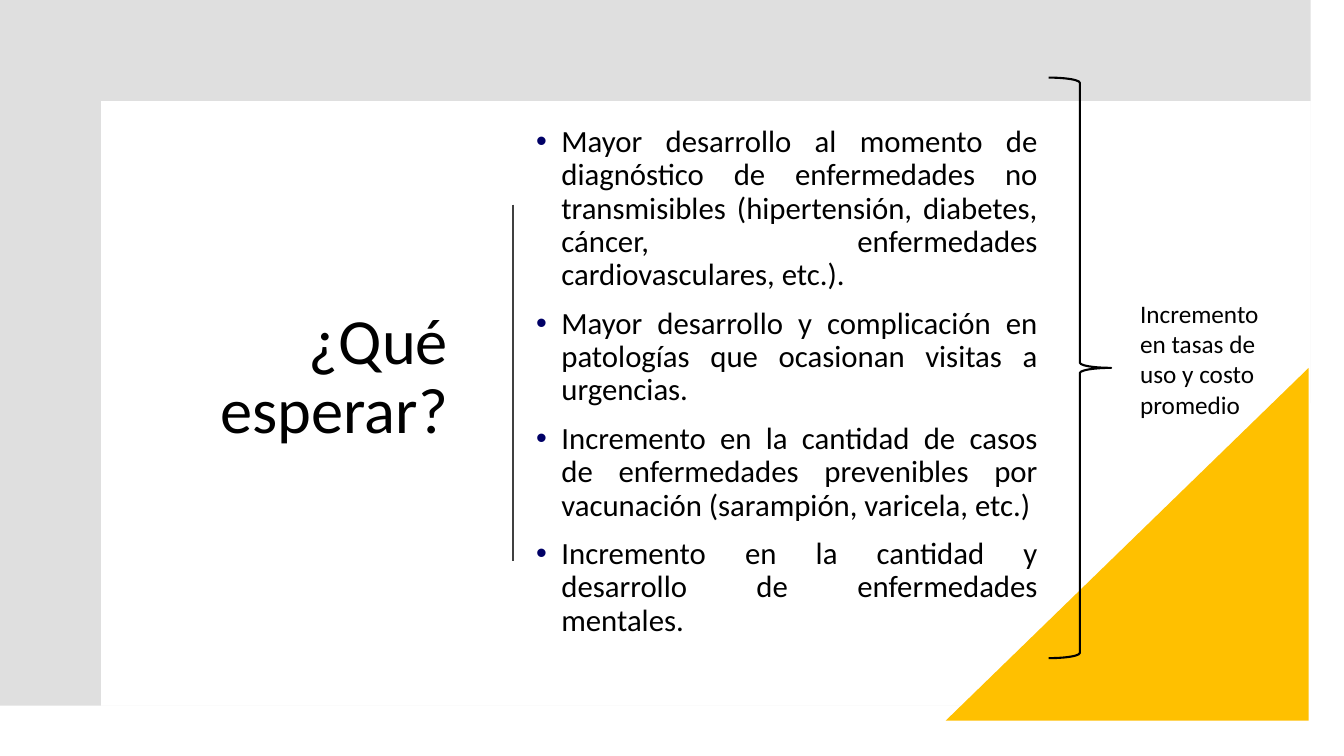
from dataclasses import dataclass

from lxml import etree
from pptx import Presentation
from pptx.dml.color import RGBColor
from pptx.enum.shapes import MSO_CONNECTOR, MSO_SHAPE
from pptx.enum.text import MSO_ANCHOR, PP_ALIGN
from pptx.oxml.ns import qn
from pptx.util import Inches, Pt

RIGHT_TRIANGLE, RIGHT_BRACE = MSO_SHAPE.RIGHT_TRIANGLE, MSO_SHAPE.RIGHT_BRACE
STRAIGHT = MSO_CONNECTOR.STRAIGHT
TOP, MIDDLE = MSO_ANCHOR.TOP, MSO_ANCHOR.MIDDLE
LEFT, RIGHT, JUSTIFY = PP_ALIGN.LEFT, PP_ALIGN.RIGHT, PP_ALIGN.JUSTIFY


@dataclass(frozen=True)
class Theme:
    font: str = "Calibri"
    text: RGBColor = RGBColor(0x00, 0x00, 0x00)
    bullet: str = "000066"
    frame: RGBColor = RGBColor(0x80, 0x80, 0x80)
    frame_opacity: int = 25
    corner: RGBColor = RGBColor(0xFF, 0xC0, 0x00)
    divider: RGBColor = RGBColor(0x40, 0x40, 0x40)
    stroke: float = 1.5
    title_size: int = 46
    body_size: int = 22
    note_size: int = 18


@dataclass(frozen=True)
class Box:
    left: float
    top: float
    width: float
    height: float

    def lengths(self):
        return tuple(Inches(v) for v in (self.left, self.top, self.width, self.height))


@dataclass(frozen=True)
class TextBlock:
    box: Box
    paragraphs: tuple[str, ...]
    size: int
    align: PP_ALIGN = LEFT
    anchor: MSO_ANCHOR = TOP
    line_spacing: float = 1.0
    bulleted: bool = False


THEME = Theme()

FRAME_OUTLINE = (
    (0.35, 0.35), (12.98, 0.35), (12.98, 3.49), (12.63, 3.83), (12.63, 0.68),
    (0.7, 0.68), (0.7, 6.81), (9.56, 6.81), (9.21, 7.15), (0.35, 7.15),
)
CORNER = Box(9.38, 3.65, 3.6, 3.5)
BRACE = Box(10.4, 0.77, 0.62, 5.76)
DIVIDER_X, DIVIDER_TOP, DIVIDER_BOTTOM = 5.09, 2.03, 5.57

TITLE = TextBlock(
    Box(1.1, 1.3, 3.44, 4.9), ("¿Qué esperar?",),
    THEME.title_size, RIGHT, MIDDLE, 0.9,
)
EXPECTATIONS = TextBlock(
    Box(4.72, 0.77, 5.67, 6.04),
    (
        "Mayor desarrollo al momento de diagnóstico de enfermedades no transmisibles "
        "(hipertensión, diabetes, cáncer, enfermedades cardiovasculares, etc.).",
        "Mayor desarrollo y complicación en patologías que ocasionan visitas a urgencias.",
        "Incremento en la cantidad de casos de enfermedades prevenibles por vacunación "
        "(sarampión, varicela, etc.)",
        "Incremento en la cantidad y desarrollo de enfermedades mentales.",
    ),
    THEME.body_size, JUSTIFY, MIDDLE, 0.9, True,
)
CONSEQUENCE = TextBlock(
    Box(11.21, 2.91, 1.65, 1.31), ("Incremento en tasas de uso y costo promedio",),
    THEME.note_size,
)


def add_frame(slide) -> None:
    builder = slide.shapes.build_freeform(*FRAME_OUTLINE[0], scale=Inches(1))
    builder.add_line_segments(FRAME_OUTLINE[1:], close=True)
    frame = builder.convert_to_shape()
    frame.shadow.inherit = False
    frame.line.fill.background()
    frame.fill.solid()
    frame.fill.fore_color.rgb = THEME.frame
    color = frame.fill._xPr.find(f"{qn('a:solidFill')}/{qn('a:srgbClr')}")
    etree.SubElement(color, qn("a:alpha"), val=str(THEME.frame_opacity * 1000))


def add_corner(slide) -> None:
    corner = slide.shapes.add_shape(RIGHT_TRIANGLE, *CORNER.lengths())
    corner.shadow.inherit = False
    corner.fill.solid()
    corner.fill.fore_color.rgb = THEME.corner
    corner.line.fill.background()
    corner._element.spPr.find(qn("a:xfrm")).set("flipH", "1")


def add_divider(slide) -> None:
    x = Inches(DIVIDER_X)
    divider = slide.shapes.add_connector(
        STRAIGHT, x, Inches(DIVIDER_TOP), x, Inches(DIVIDER_BOTTOM)
    )
    divider.line.color.rgb = THEME.divider
    divider.line.width = Pt(THEME.stroke)
    etree.SubElement(divider._element.spPr, qn("a:effectLst"))


def add_brace(slide) -> None:
    brace = slide.shapes.add_shape(RIGHT_BRACE, *BRACE.lengths())
    brace.shadow.inherit = False
    brace.fill.background()
    brace.line.color.rgb = THEME.text
    brace.line.width = Pt(THEME.stroke)


def add_bullet(paragraph) -> None:
    properties = paragraph._p.get_or_add_pPr()
    properties.set("marL", str(Inches(0.75)))
    properties.set("indent", str(Inches(-0.25)))
    color = etree.SubElement(properties, qn("a:buClr"))
    etree.SubElement(color, qn("a:srgbClr"), val=THEME.bullet)
    etree.SubElement(properties, qn("a:buFont"), typeface="Arial")
    etree.SubElement(properties, qn("a:buChar"), char="•")


def add_text(slide, block: TextBlock) -> None:
    frame = slide.shapes.add_textbox(*block.box.lengths()).text_frame
    frame.word_wrap = True
    frame.vertical_anchor = block.anchor
    for index, text in enumerate(block.paragraphs):
        paragraph = frame.add_paragraph() if index else frame.paragraphs[0]
        paragraph.alignment = block.align
        paragraph.line_spacing = block.line_spacing
        if block.bulleted:
            paragraph.space_before = Pt(block.size / 2)
            add_bullet(paragraph)
        run = paragraph.add_run()
        run.text = text
        run.font.name = THEME.font
        run.font.size = Pt(block.size)
        run.font.color.rgb = THEME.text


def main() -> None:
    presentation = Presentation()
    presentation.slide_width = Inches(13.33)
    presentation.slide_height = Inches(7.5)
    slide = presentation.slides.add_slide(presentation.slide_layouts[6])
    add_frame(slide)
    add_corner(slide)
    add_text(slide, TITLE)
    add_divider(slide)
    add_text(slide, EXPECTATIONS)
    add_brace(slide)
    add_text(slide, CONSEQUENCE)
    presentation.save("out.pptx")


if __name__ == "__main__":
    main()
